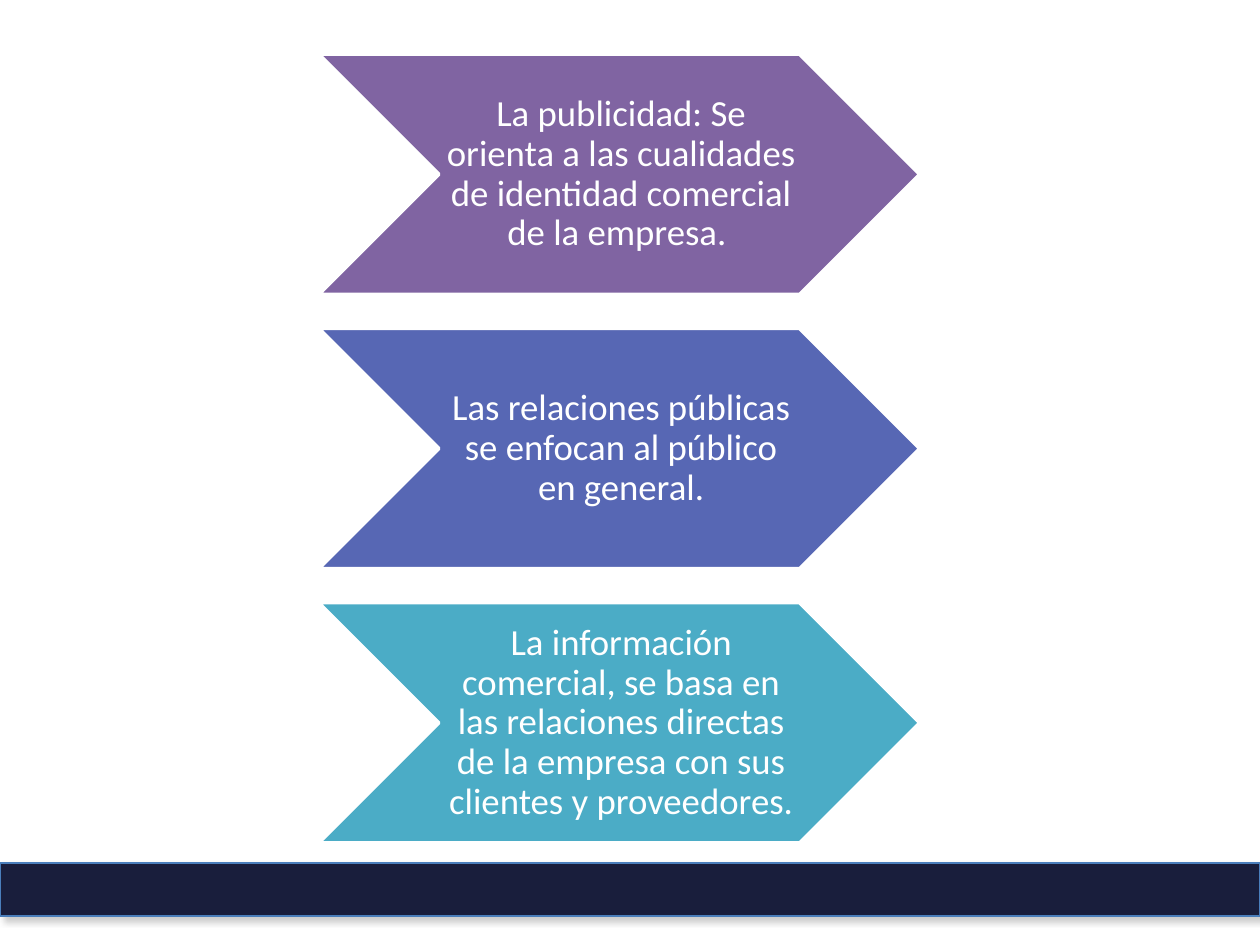
from dataclasses import dataclass

from lxml import etree
from pptx import Presentation
from pptx.dml.color import RGBColor
from pptx.enum.shapes import MSO_SHAPE
from pptx.enum.text import MSO_ANCHOR, PP_ALIGN
from pptx.oxml.ns import qn
from pptx.util import Inches, Pt

CHEVRON = MSO_SHAPE.CHEVRON
RECTANGLE = MSO_SHAPE.RECTANGLE
MIDDLE = MSO_ANCHOR.MIDDLE
CENTER = PP_ALIGN.CENTER
BLANK_LAYOUT = 6


@dataclass(frozen=True)
class Theme:
    font: str = "Calibri"
    body_size: float = 21
    white: str = "FFFFFF"
    publicity: str = "8064A2"
    relations: str = "5767B4"
    information: str = "4BACC6"
    footer: str = "191E3C"
    footer_line: str = "4A7EBB"
    shadow: str = "808080"


THEME = Theme()

CONCEPTS = [
    ("La publicidad: Se orienta a las cualidades de identidad comercial "
     "de la empresa. ", THEME.publicity),
    ("Las relaciones públicas se enfocan al público en general.",
     THEME.relations),
    ("La información comercial, se basa en las relaciones directas de la "
     "empresa con sus clientes y proveedores.", THEME.information),
]


def add_block(slide, preset, box, fill, line, line_width):
    block = slide.shapes.add_shape(preset, *(Inches(length) for length in box))
    block.shadow.inherit = False
    block.fill.solid()
    block.fill.fore_color.rgb = RGBColor.from_string(fill)
    block.line.color.rgb = RGBColor.from_string(line)
    block.line.width = Pt(line_width)
    return block


def write_concept(chevron, text):
    frame = chevron.text_frame
    frame.word_wrap = True
    frame.vertical_anchor = MIDDLE
    frame.margin_left = Inches(0.03)
    frame.margin_right = 0
    frame.margin_top = frame.margin_bottom = Inches(0.01)
    paragraph = frame.paragraphs[0]
    paragraph.alignment = CENTER
    paragraph.line_spacing = 0.9
    run = paragraph.add_run()
    run.text = text
    run.font.name = THEME.font
    run.font.size = Pt(THEME.body_size)
    run.font.color.rgb = RGBColor.from_string(THEME.white)


def add_chevron_list(slide, box, concepts, gap):
    """Stack one chevron per concept, filling the box with equal gaps."""
    left, top, width, height = box
    chevron_height = (height - gap * (len(concepts) - 1)) / len(concepts)
    for index, (text, color) in enumerate(concepts):
        chevron_top = top + index * (chevron_height + gap)
        chevron = add_block(slide, CHEVRON,
                            (left, chevron_top, width, chevron_height),
                            color, THEME.white, 2)
        chevron.adjustments[0] = 0.5
        write_concept(chevron, text)


def add_drop_shadow(shape):
    effects = shape.element.spPr.find(qn("a:effectLst"))
    shadow = etree.SubElement(
        effects, qn("a:outerShdw"), blurRad=str(Pt(4)), dist=str(Pt(3)),
        dir=str(45 * 60000), rotWithShape="0")
    color = etree.SubElement(shadow, qn("a:srgbClr"), val=THEME.shadow)
    etree.SubElement(color, qn("a:alpha"), val="40000")


def add_footer_band(slide, box):
    band = add_block(slide, RECTANGLE, box, THEME.footer,
                     THEME.footer_line, 0.75)
    add_drop_shadow(band)


def main():
    presentation = Presentation()
    presentation.slide_width = Inches(10)
    presentation.slide_height = Inches(7.5)
    slide = presentation.slides.add_slide(
        presentation.slide_layouts[BLANK_LAYOUT])
    slide.background.fill.solid()
    slide.background.fill.fore_color.rgb = RGBColor.from_string(THEME.white)
    add_chevron_list(slide, (2.53, 0.43, 4.77, 6.26), CONCEPTS, gap=0.27)
    add_footer_band(slide, (0, 6.85, 10, 0.42))
    presentation.save("out.pptx")


if __name__ == "__main__":
    main()
